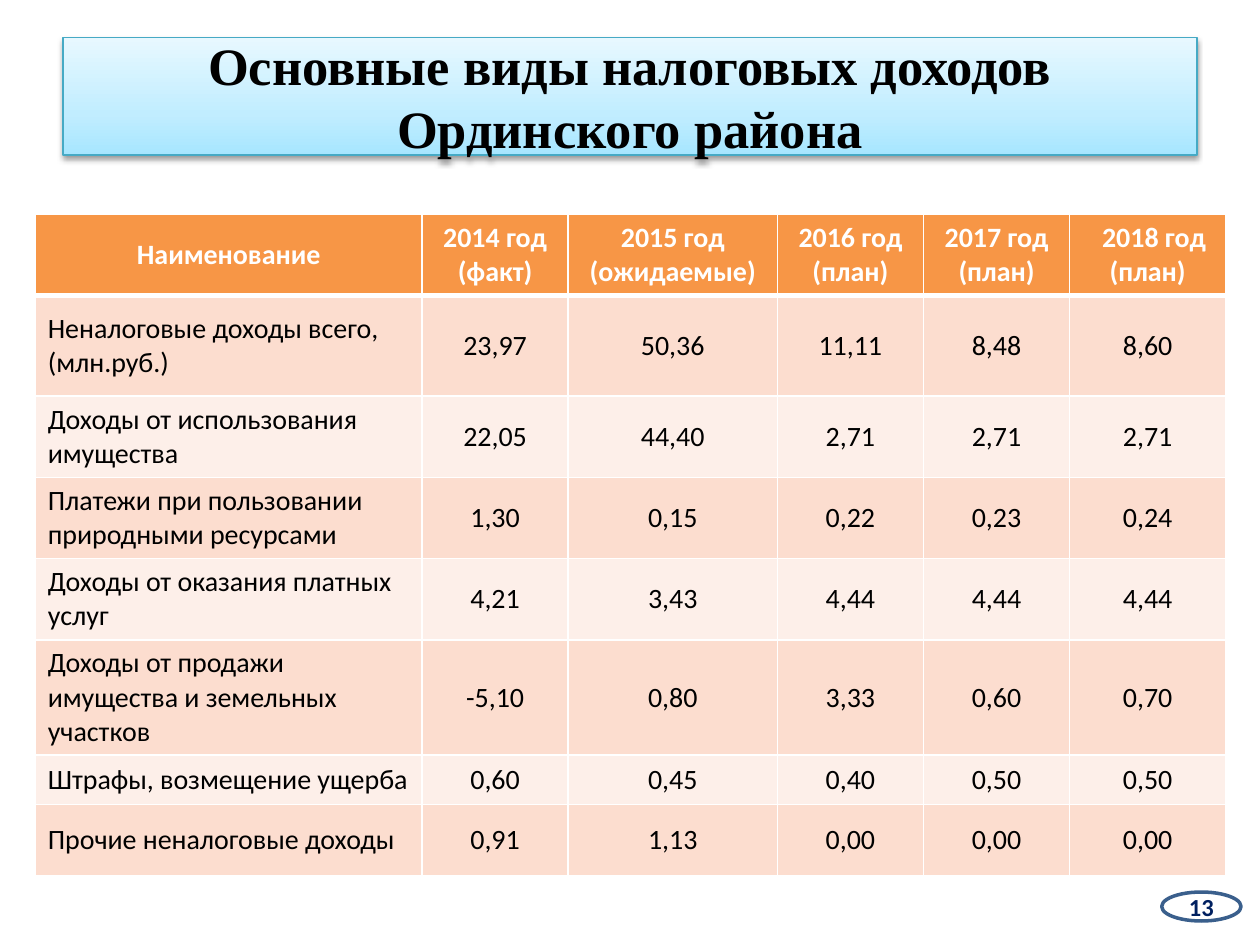
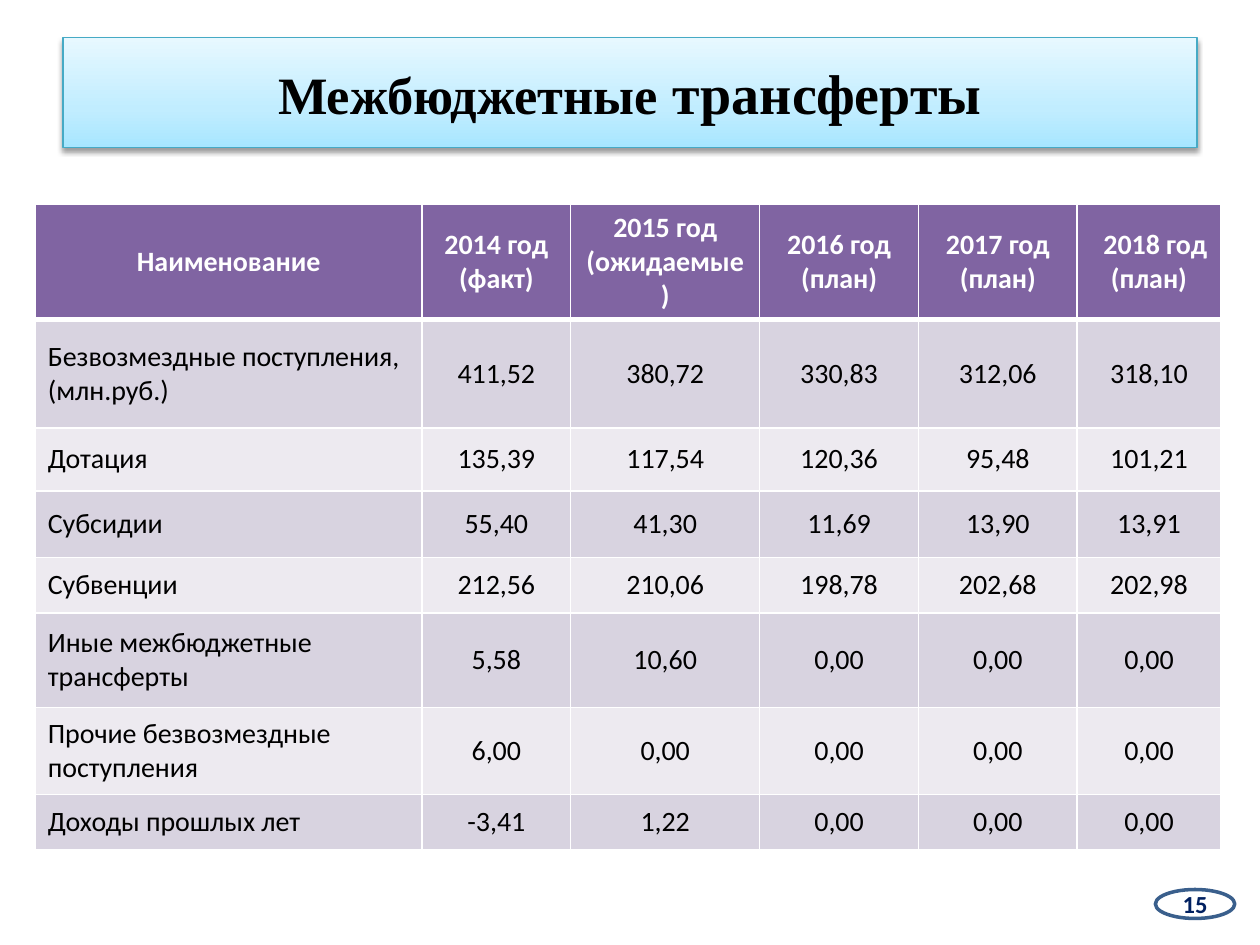
from lxml import etree
from pptx import Presentation
from pptx.dml.color import RGBColor
from pptx.enum.shapes import MSO_SHAPE as SHAPE
from pptx.enum.text import MSO_ANCHOR as ANCHOR, PP_ALIGN as ALIGN
from pptx.oxml import parse_xml
from pptx.oxml.ns import nsdecls, qn
from pptx.util import Inches, Pt

# The slide is a grid of 100 columns by 75 rows.
COLS, ROWS = 100, 75
UNIT = Inches(0.1)

TITLE_FONT = {"name": "Times New Roman", "bold": True}
BADGE_FONT = {"name": "Calibri", "size": Pt(14), "bold": True}
HEAD_FONT = {"name": "Calibri", "size": Pt(16), "bold": True}
BODY_FONT = {**HEAD_FONT, "bold": False}
BAND_STOPS = ((0, "A7E6FF"), (35, "C1EDFF"), (100, "E7F8FF"))

HEADER = ["Наименование", "2014 год (факт)", "2015 год (ожидаемые)",
          "2016 год (план)", "2017 год (план)", "2018 год (план)"]
ORANGE = ("F79646", "FCDDCF", "FDEFE9")
PURPLE = ("8064A2", "D8D3E0", "EDEAF0")

OWN_INCOME = [
    ("Неналоговые доходы всего, (млн.руб.)", "23,97 50,36 11,11 8,48 8,60"),
    ("Доходы от использования имущества", "22,05 44,40 2,71 2,71 2,71"),
    ("Платежи при пользовании природными ресурсами", "1,30 0,15 0,22 0,23 0,24"),
    ("Доходы от оказания платных услуг", "4,21 3,43 4,44 4,44 4,44"),
    ("Доходы от продажи имущества и земельных участков", "-5,10 0,80 3,33 0,60 0,70"),
    ("Штрафы, возмещение ущерба", "0,60 0,45 0,40 0,50 0,50"),
    ("Прочие неналоговые доходы", "0,91 1,13 0,00 0,00 0,00"),
]
TRANSFERS = [
    ("Безвозмездные поступления, (млн.руб.)", "411,52 380,72 330,83 312,06 318,10"),
    ("Дотация", "135,39 117,54 120,36 95,48 101,21"),
    ("Субсидии", "55,40 41,30 11,69 13,90 13,91"),
    ("Субвенции", "212,56 210,06 198,78 202,68 202,98"),
    ("Иные межбюджетные трансферты", "5,58 10,60 0,00 0,00 0,00"),
    ("Прочие безвозмездные поступления", "6,00 0,00 0,00 0,00 0,00"),
    ("Доходы прошлых лет", "-3,41 1,22 0,00 0,00 0,00"),
]


def rgb(value):
    return RGBColor.from_string(value)


def units(*values):
    """Turn grid columns or rows into slide lengths."""
    return [round(v * UNIT) for v in values]


class Deck:
    def __init__(self):
        self.prs = Presentation()
        self.prs.slide_width, self.prs.slide_height = units(COLS, ROWS)
        self.slide = None

    def new_slide(self):
        self.slide = self.prs.slides.add_slide(self.prs.slide_layouts[6])

    def text(self, tf, runs, font, color, align=ALIGN.CENTER):
        """Fill the first paragraph with (text, extra font values) runs."""
        p = tf.paragraphs[0]
        p.alignment = align
        for words, extra in runs:
            r = p.add_run()
            r.text = words
            for key, value in {**font, **extra}.items():
                setattr(r.font, key, value)
            r.font.color.rgb = rgb(color)
        return p

    def shape(self, kind, box, line, width):
        sp = self.slide.shapes.add_shape(kind, *units(*box))
        sp.shadow.inherit = False
        sp.line.color.rgb = rgb(line)
        sp.line.width = Pt(width)
        sp.text_frame.word_wrap = True
        sp.text_frame.vertical_anchor = ANCHOR.MIDDLE
        return sp

    def title(self, height, *runs):
        sp = self.shape(SHAPE.RECTANGLE, (5, 3, 90, height), "46AAC5", 0.75)
        stops = "".join(f'<a:gs pos="{pos * 1000}"><a:srgbClr val="{color}"/></a:gs>'
                        for pos, color in BAND_STOPS)
        pr = sp.element.spPr
        pr.find(qn("a:prstGeom")).addnext(parse_xml(
            f'<a:gradFill {nsdecls("a")} rotWithShape="1"><a:gsLst>{stops}</a:gsLst>'
            '<a:lin ang="16200000" scaled="0"/></a:gradFill>'))
        pr.find(qn("a:effectLst")).append(parse_xml(
            f'<a:outerShdw {nsdecls("a")} blurRad="{Pt(3.1)}" dist="{Pt(1.6)}" '
            'dir="5400000" rotWithShape="0"><a:srgbClr val="000000">'
            '<a:alpha val="38000"/></a:srgbClr></a:outerShdw>'))
        self.text(sp.text_frame, [(words, {"size": Pt(size)}) for words, size in runs],
                  TITLE_FONT, "000000")

    def page_badge(self, number, x, y):
        sp = self.shape(SHAPE.OVAL, (x, y, 6.3, 2.3), "3A5F8C", 2)
        sp.fill.solid()
        sp.fill.fore_color.rgb = rgb("FFFFFF")
        self.text(sp.text_frame, [(number, {})], BADGE_FONT, "002060")

    def borders(self, cell, **widths):
        pr = cell._tc.get_or_add_tcPr()
        for side in ("L", "R", "T", "B"):
            ln = etree.SubElement(pr, qn(f"a:ln{side}"), w=str(Pt(widths.get(side, 1))))
            fill = etree.SubElement(ln, qn("a:solidFill"))
            etree.SubElement(fill, qn("a:srgbClr"), val="FFFFFF")

    def cell(self, cell, words, fill, font, color, align, **widths):
        self.borders(cell, **widths)
        cell.fill.solid()
        cell.fill.fore_color.rgb = rgb(fill)
        cell.vertical_anchor = ANCHOR.MIDDLE
        return self.text(cell.text_frame, [(words, {})], font, color, align)

    def table(self, top, widths, heights, records, palette):
        head, *bands = palette
        frame = self.slide.shapes.add_table(
            len(heights), len(widths),
            *units(2.8, top, sum(widths), sum(heights)))
        table = frame.table
        table.first_row = table.horz_banding = False
        for column, width in zip(table.columns, units(*widths)):
            column.width = width
        for row, height in zip(table.rows, units(*heights)):
            row.height = height
        for j, words in enumerate(HEADER):
            p = self.cell(table.cell(0, j), words, head, HEAD_FONT, "FFFFFF",
                          ALIGN.CENTER, B=3)
        # The last heading starts with a small first-line indent.
        p._p.get_or_add_pPr().set("indent", str(UNIT))
        for i, (name, values) in enumerate(records, 1):
            for j, words in enumerate([name, *values.split()]):
                self.cell(table.cell(i, j), words, bands[(i - 1) % 2], BODY_FONT, "000000",
                          ALIGN.CENTER if j else ALIGN.LEFT, T=3 if i == 1 else 1)


def main():
    deck = Deck()

    deck.new_slide()
    deck.page_badge("13", 92.2, 70.8)
    deck.title(9.3, ("Основные виды налоговых доходов Ординского района", 30))
    deck.table(17, [30.7, 11.6, 16.6, 11.6, 11.6, 12.4],
               [6.35, 8, 6.45, 6.45, 6.45, 9.1, 3.9, 5.7], OWN_INCOME, ORANGE)

    deck.new_slide()
    deck.title(8.7, ("Межбюджетные", 30), (" трансферты", 32))
    deck.table(16.2, [30.7, 11.8, 15, 12.6, 12.6, 11.4],
               [9.1, 8.6, 5, 5.3, 4.4, 7.5, 6.9, 4.4], TRANSFERS, PURPLE)
    deck.page_badge("15", 91.7, 70.6)

    deck.prs.save("out.pptx")


if __name__ == "__main__":
    main()
